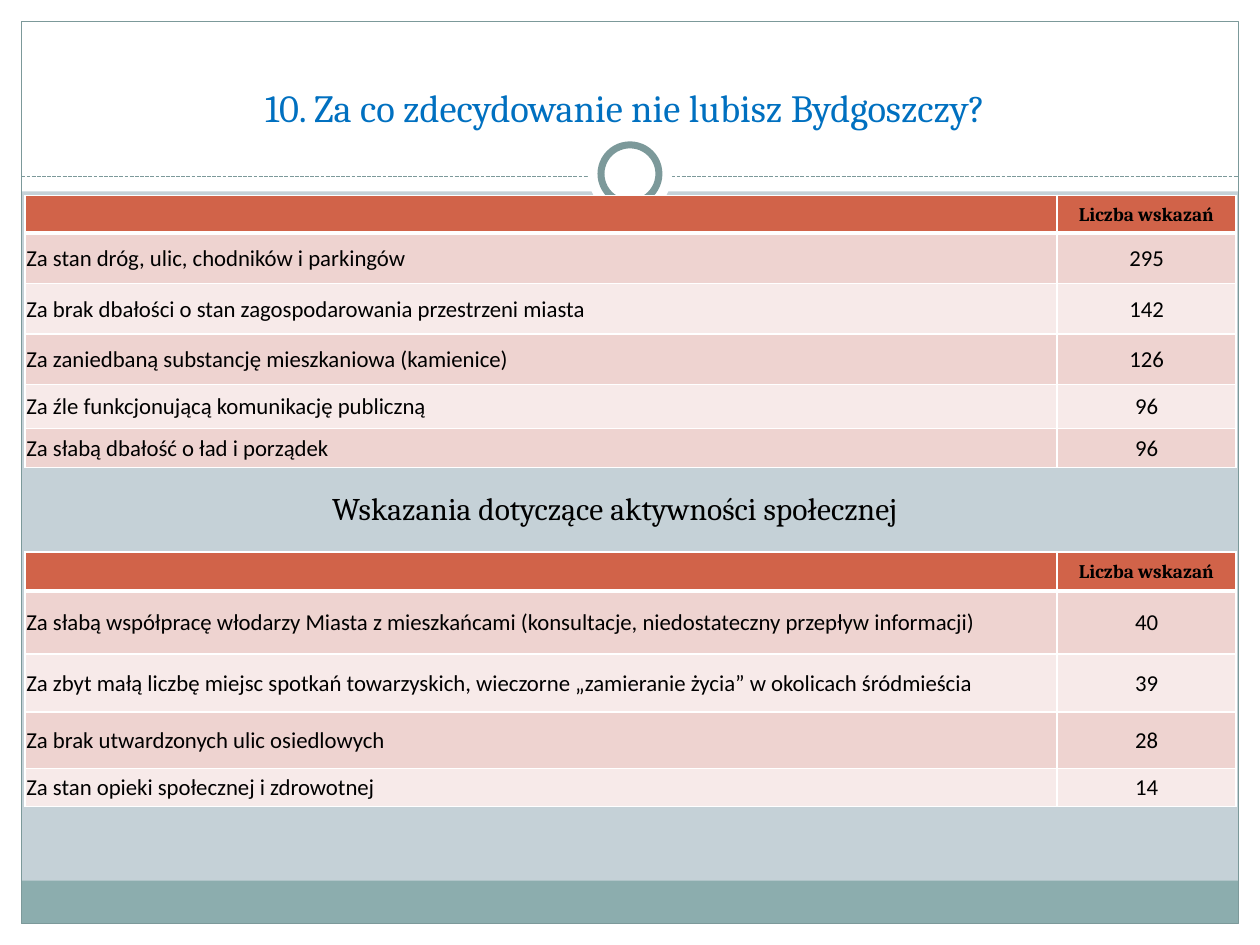
"""Build the survey slide on what residents dislike about Bydgoszcz."""
from lxml.etree import SubElement
from pptx import Presentation
from pptx.dml.color import RGBColor
from pptx.enum.dml import MSO_LINE
from pptx.enum.shapes import MSO_CONNECTOR, MSO_SHAPE
from pptx.enum.text import MSO_ANCHOR, PP_ALIGN
from pptx.oxml.ns import qn
from pptx.util import Inches, Pt

TITLE = "10. Za co zdecydowanie nie lubisz Bydgoszczy? "
SUBTITLE = "Wskazania dotyczące aktywności społecznej"
HEADER = ("", "Liczba wskazań")
CITY_ANSWERS = [
    ("Za stan dróg, ulic, chodników i parkingów", "295"),
    ("Za brak dbałości o stan zagospodarowania przestrzeni miasta", "142"),
    ("Za zaniedbaną substancję mieszkaniowa (kamienice)", "126"),
    ("Za źle funkcjonującą komunikację publiczną", "96"),
    ("Za słabą dbałość o ład i porządek", "96"),
]
SOCIAL_ANSWERS = [
    ("Za słabą współpracę włodarzy Miasta z mieszkańcami "
     "(konsultacje, niedostateczny przepływ informacji)", "40"),
    ("Za zbyt małą liczbę miejsc spotkań towarzyskich, "
     "wieczorne „zamieranie życia” w okolicach śródmieścia", "39"),
    ("Za brak utwardzonych ulic osiedlowych", "28"),
    ("Za stan opieki społecznej i zdrowotnej", "14"),
]
TABLES = [
    (1.55, [0.3, 0.4, 0.4, 0.4, 0.35, 0.31], CITY_ANSWERS),
    (4.38, [0.31, 0.5, 0.46, 0.45, 0.3], SOCIAL_ANSWERS),
]

WIDTH, HEIGHT, MARGIN = 10, 7.5, 0.17
TOP_BAND, FOOTER, DIVIDER = 1.52, 0.34, 1.4
RING_CENTER = 1.38
TABLE_LEFT, COLUMNS = 0.2, [8.19, 1.42]

WHITE = RGBColor(0xFF, 0xFF, 0xFF)
BLACK = RGBColor(0, 0, 0)
BLUE = RGBColor(0x00, 0x70, 0xC0)
MIST = RGBColor(0xC5, 0xD1, 0xD7)
TEAL = RGBColor(0x8C, 0xAD, 0xAE)
FRAME = RGBColor(0x7C, 0x99, 0x9A)
BRICK = RGBColor(0xD1, 0x63, 0x49)
BANDS = [RGBColor(0xEE, 0xD3, 0xD0), RGBColor(0xF7, 0xEA, 0xE9)]


def write(frame, text, *, size, font, color=BLACK, bold=False, align=PP_ALIGN.CENTER):
    paragraph = frame.paragraphs[0]
    paragraph.alignment = align
    if not text:
        SubElement(paragraph._p, qn("a:endParaRPr"), sz=str(size * 100))
        return
    run = paragraph.add_run()
    run.text = text
    run.font.size, run.font.name, run.font.bold = Pt(size), font, bold
    run.font.color.rgb = color


def add_text(slide, box, text, *, anchor=MSO_ANCHOR.TOP, **style):
    frame = slide.shapes.add_textbox(*map(Inches, box)).text_frame
    frame.word_wrap = True
    frame.vertical_anchor = anchor
    write(frame, text, font="Cambria", **style)


def add_block(slide, box, fill=None, line=None, weight=0.75, kind=MSO_SHAPE.RECTANGLE):
    block = slide.shapes.add_shape(kind, *map(Inches, box))
    block.shadow.inherit = False
    if fill is None:
        block.fill.background()
    else:
        block.fill.solid()
        block.fill.fore_color.rgb = fill
    if line is None:
        block.line.fill.background()
    else:
        block.line.color.rgb = line
        block.line.width = Pt(weight)


def add_circle(slide, diameter, **style):
    box = ((WIDTH - diameter) / 2, RING_CENTER - diameter / 2, diameter, diameter)
    add_block(slide, box, kind=MSO_SHAPE.OVAL, **style)


def add_divider(slide):
    ends = (MARGIN, DIVIDER, WIDTH - MARGIN, DIVIDER)
    divider = slide.shapes.add_connector(MSO_CONNECTOR.STRAIGHT, *map(Inches, ends))
    divider.line.color.rgb = FRAME
    divider.line.width = Pt(0.75)
    divider.line.dash_style = MSO_LINE.SQUARE_DOT
    SubElement(divider._element.spPr, qn("a:effectLst"))


def style_cell(cell, fill, bottom):
    cell.margin_left = cell.margin_right = cell.margin_top = Inches(0.01)
    cell.margin_bottom = 0
    cell.vertical_anchor = MSO_ANCHOR.MIDDLE
    properties = cell._tc.get_or_add_tcPr()
    for side, weight in (("L", 1), ("R", 1), ("T", 1), ("B", bottom)):
        border = SubElement(properties, qn(f"a:ln{side}"), w=str(Pt(weight)))
        paint = SubElement(border, qn("a:solidFill"))
        SubElement(paint, qn("a:srgbClr"), val=str(WHITE))
    cell.fill.solid()
    cell.fill.fore_color.rgb = fill


def add_answers(slide, top, heights, answers):
    box = (TABLE_LEFT, top, sum(COLUMNS), sum(heights))
    table = slide.shapes.add_table(len(heights), len(COLUMNS), *map(Inches, box)).table
    for column, width in zip(table.columns, COLUMNS):
        column.width = Inches(width)
    for r, (height, texts) in enumerate(zip(heights, [HEADER, *answers])):
        table.rows[r].height = Inches(height)
        for c, text in enumerate(texts):
            cell = table.cell(r, c)
            if r == 0:
                style_cell(cell, BRICK, bottom=3)
                write(cell.text_frame, text, size=11, font="Cambria", bold=True)
            else:
                style_cell(cell, BANDS[(r - 1) % 2], bottom=3 if r == 0 else 1)
                write(cell.text_frame, text, size=13, font="Calibri",
                      align=PP_ALIGN.CENTER if c else PP_ALIGN.LEFT)


def main():
    deck = Presentation()
    deck.slide_width, deck.slide_height = Inches(WIDTH), Inches(HEIGHT)
    slide = deck.slides.add_slide(deck.slide_layouts[6])
    slide.background.fill.solid()
    slide.background.fill.fore_color.rgb = MIST

    inner_width, inner_bottom = WIDTH - 2 * MARGIN, HEIGHT - MARGIN
    for edge in [
        (0, inner_bottom, WIDTH, MARGIN),
        (0, 0, WIDTH, TOP_BAND),
        (0, 0, MARGIN, HEIGHT),
        (WIDTH - MARGIN, 0, MARGIN, HEIGHT),
    ]:
        add_block(slide, edge, fill=WHITE)
    add_block(slide, (MARGIN, inner_bottom - FOOTER, inner_width, FOOTER), fill=TEAL)
    add_block(slide, (MARGIN, MARGIN, inner_width, HEIGHT - 2 * MARGIN), line=FRAME)
    add_divider(slide)
    add_circle(slide, 0.67, fill=WHITE)
    add_circle(slide, 0.46, fill=WHITE, line=FRAME, weight=4)

    add_text(slide, (0.33, 0.25, 9.33, 0.83), TITLE, size=22, color=BLUE,
             anchor=MSO_ANCHOR.BOTTOM)
    add_text(slide, (0.35, 3.83, 9.06, 0.4), SUBTITLE, size=18)
    for top, heights, answers in TABLES:
        add_answers(slide, top, heights, answers)
    deck.save("out.pptx")


if __name__ == "__main__":
    main()
